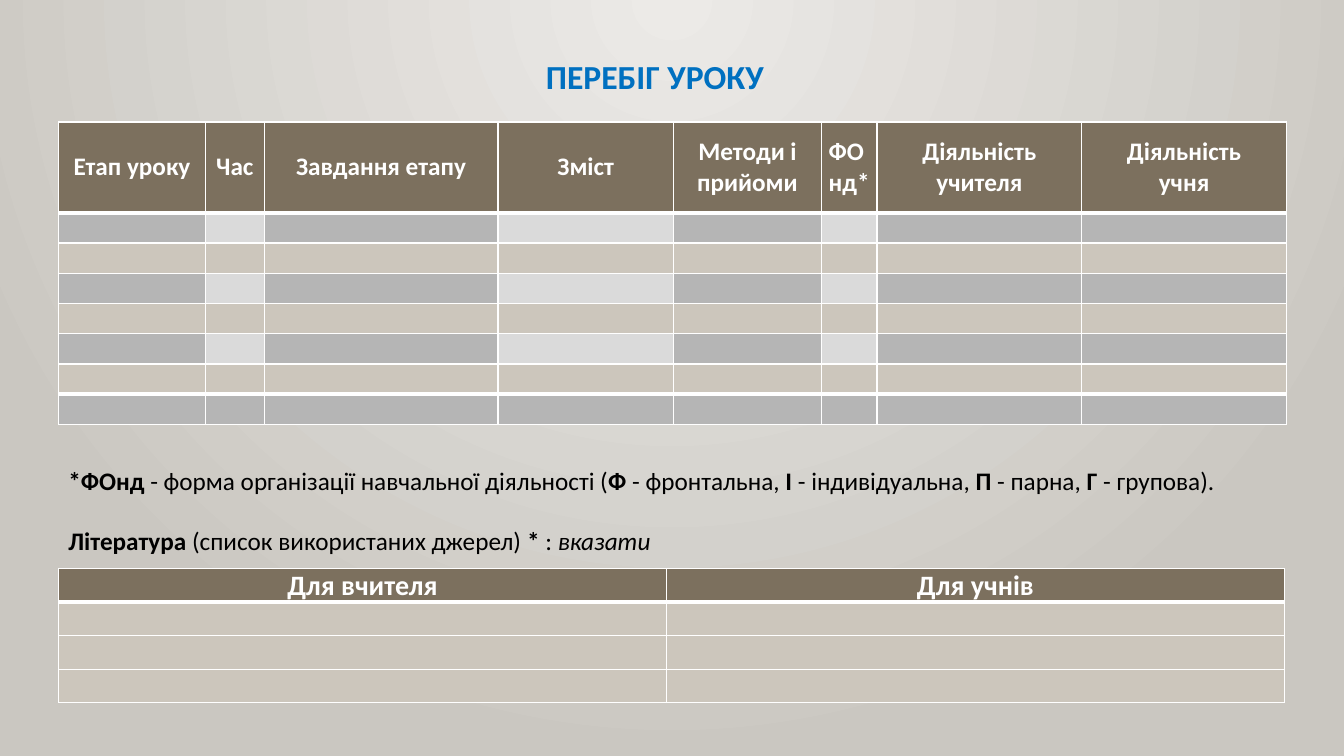
from dataclasses import dataclass, field

from lxml.etree import SubElement
from pptx import Presentation
from pptx.dml.color import RGBColor
from pptx.enum.text import MSO_ANCHOR, MSO_AUTO_SIZE, PP_ALIGN
from pptx.oxml import parse_xml
from pptx.oxml.ns import nsdecls, qn
from pptx.slide import Slide
from pptx.table import _Cell
from pptx.util import Inches, Pt

FONT = "Calibri"
BLUE = RGBColor(0x00, 0x70, 0xC0)
BLACK = RGBColor(0x00, 0x00, 0x00)
WHITE = RGBColor(0xFF, 0xFF, 0xFF)
BROWN = RGBColor(0x7C, 0x70, 0x5E)
BEIGE = RGBColor(0xCC, 0xC6, 0xBC)
GREY = RGBColor(0xB5, 0xB5, 0xB5)
PALE = RGBColor(0xDA, 0xDA, 0xDA)
GLOW = RGBColor(0xEC, 0xEA, 0xE7)
EDGE = RGBColor(0xCA, 0xC7, 0xC1)

LEFT, WIDTH = 0.58, 12.17


@dataclass
class Span:
    text: str
    bold: bool = False
    italic: bool = False
    size: float | None = None


@dataclass
class TextLine:
    top: float
    width: float
    height: float
    spans: list[Span]
    size: float = 18
    color: RGBColor = BLACK
    align: PP_ALIGN = PP_ALIGN.LEFT


@dataclass
class Grid:
    top: float
    col_widths: list[float]
    row_heights: list[float]
    headers: list[str]
    size: float
    anchor: MSO_ANCHOR
    body_fills: list[list[RGBColor]]
    rules: dict[int, float]  # row index -> width in points of the line below it
    left_headers: set[str] = field(default_factory=set)


TITLE = TextLine(0.39, WIDTH, 0.64, [Span("ПЕРЕБІГ УРОКУ", bold=True), Span("\t", size=32)],
                 24, BLUE, PP_ALIGN.CENTER)
FOOTNOTE = TextLine(4.57, WIDTH, 0.4, [
    Span("*ФОнд", bold=True), Span(" - форма організації навчальної діяльності ("),
    Span("Ф", bold=True), Span(" - фронтальна, "),
    Span("І ", bold=True), Span("- індивідуальна, "),
    Span("П", bold=True), Span(" - парна, "),
    Span("Г", bold=True), Span(" - групова)."),
])
SOURCES = TextLine(5.16, 6.78, 0.4, [
    Span("Література", bold=True), Span(" (список використаних джерел)"),
    Span(" * ", bold=True), Span(": "), Span("вказати", italic=True),
])

CHECKED = [GREY, PALE] * 3 + [GREY] * 2
LESSON = Grid(
    1.21, [1.46, 0.58, 2.32, 1.74, 1.47, 0.55, 2.03, 2.03], [0.9] + [0.3] * 7,
    ["Етап уроку", "Час", "Завдання етапу", "Зміст", "Методи і прийоми", "ФОнд*",
     "Діяльність\nучителя", "Діяльність\nучня"],
    18, MSO_ANCHOR.MIDDLE,
    [CHECKED, [BEIGE] * 8] * 3 + [[GREY] * 8],
    {0: 3, 6: 3}, {"ФОнд*"},
)
LITERATURE = Grid(
    5.64, [6.03, 6.13], [1.33 / 4] * 4, ["Для вчителя", "Для учнів"],
    20, MSO_ANCHOR.TOP, [[BEIGE] * 2] * 3, {0: 3, 2: 0.75},
)


def paint_background(s: Slide) -> None:
    fill = s.background.fill
    fill.gradient()
    for stop, color in zip(fill.gradient_stops, (GLOW, EDGE)):
        stop.color.rgb = color
    grad = s.element.find(".//" + qn("a:gradFill"))
    grad.remove(grad.find(qn("a:lin")))
    circle = SubElement(grad, qn("a:path"), path="circle")
    SubElement(circle, qn("a:fillToRect"), l="43000", t="0", r="43000", b="100000")


def add_text(s: Slide, line: TextLine) -> None:
    tf = s.shapes.add_textbox(Inches(LEFT), Inches(line.top),
                              Inches(line.width), Inches(line.height)).text_frame
    tf.word_wrap = True
    tf.auto_size = MSO_AUTO_SIZE.SHAPE_TO_FIT_TEXT
    p = tf.paragraphs[0]
    p.alignment = line.align
    p.font.name, p.font.color.rgb = FONT, line.color
    for span in line.spans:
        r = p.add_run()
        r.text = span.text
        r.font.size = Pt(span.size or line.size)
        r.font.bold, r.font.italic = span.bold, span.italic


def set_borders(cell: _Cell, above: float, below: float) -> None:
    """Draw white lines round a cell; must run before the cell is filled."""
    tc_pr = cell._tc.get_or_add_tcPr()
    for side, width in (("L", 1), ("R", 1), ("T", above), ("B", below)):
        tc_pr.append(parse_xml(
            f'<a:ln{side} {nsdecls("a")} w="{Pt(width)}"><a:solidFill>'
            f'<a:srgbClr val="{WHITE}"/></a:solidFill></a:ln{side}>'))


def add_grid(s: Slide, grid: Grid) -> None:
    fills = [[BROWN] * len(grid.headers)] + grid.body_fills
    table = s.shapes.add_table(
        len(fills), len(grid.headers), Inches(LEFT), Inches(grid.top),
        Inches(WIDTH), Inches(sum(grid.row_heights))).table
    table.horz_banding = False
    for column, width in zip(table.columns, grid.col_widths):
        column.width = Inches(width)
    for i, row_fills in enumerate(fills):
        table.rows[i].height = Inches(grid.row_heights[i])
        for j, color in enumerate(row_fills):
            cell = table.cell(i, j)
            cell.margin_left = cell.margin_right = Inches(0.07)
            cell.margin_top = cell.margin_bottom = 0
            set_borders(cell, grid.rules.get(i - 1, 1), grid.rules.get(i, 1))
            cell.fill.solid()
            cell.fill.fore_color.rgb = color
    for j, header in enumerate(grid.headers):
        cell = table.cell(0, j)
        cell.vertical_anchor = grid.anchor
        p = cell.text_frame.paragraphs[0]
        p.text = header
        p.alignment = PP_ALIGN.LEFT if header in grid.left_headers else PP_ALIGN.CENTER
        p.font.name, p.font.size, p.font.bold = FONT, Pt(grid.size), True
        p.font.color.rgb = WHITE


def main() -> None:
    prs = Presentation()
    prs.slide_width, prs.slide_height = Inches(13.33), Inches(7.5)
    s = prs.slides.add_slide(prs.slide_layouts[6])
    paint_background(s)
    add_text(s, TITLE)
    add_grid(s, LESSON)
    add_text(s, FOOTNOTE)
    add_text(s, SOURCES)
    add_grid(s, LITERATURE)
    prs.save("out.pptx")


if __name__ == "__main__":
    main()
